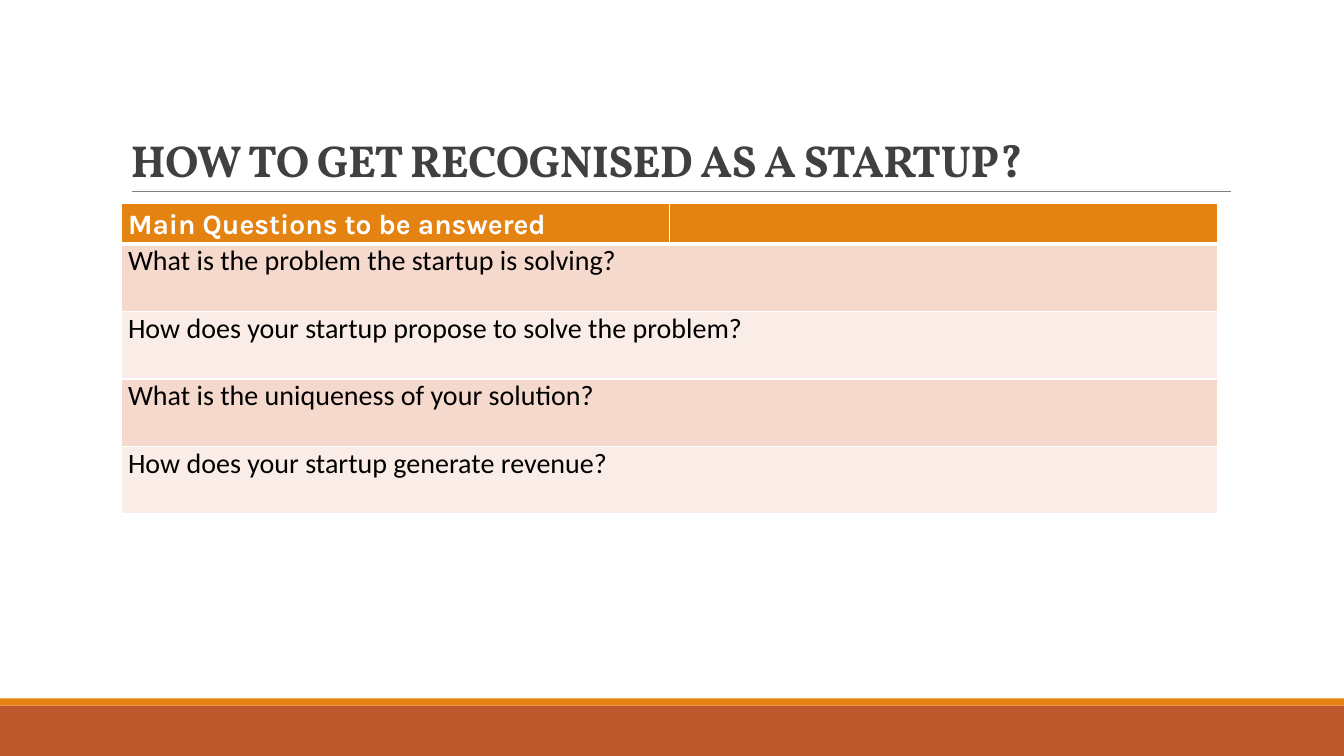
from pptx import Presentation, util as u
from pptx.dml.color import RGBColor
from pptx.enum import shapes, text
from pptx.oxml import parse_xml
from pptx.oxml.ns import nsdecls

COLORS = {
    "white": "FFFFFF", "black": "000000", "title": "404040", "rule": "808080",
    "orange": "E48312", "rust": "BD582C", "band_dark": "F5D9CC", "band_light": "FAEDE7",
}
QUESTIONS = [
    "What is the problem the startup is solving?",
    "How does your startup propose to solve the problem?",
    "What is the uniqueness of your solution?",
    "How does your startup generate revenue?",
]


def color(name):
    return RGBColor.from_string(COLORS[name])


class SlideBuilder:
    def __init__(self, slide):
        self.slide = slide

    def bar(self, top, height, fill):
        bar = self.slide.shapes.add_shape(
            shapes.MSO_SHAPE.RECTANGLE, 0, u.Inches(top), u.Inches(13.33), u.Inches(height))
        bar.shadow.inherit = False
        bar.fill.solid()
        bar.fill.fore_color.rgb = color(fill)
        bar.line.fill.background()

    def rule(self, left, right, y):
        rule = self.slide.shapes.add_connector(
            shapes.MSO_CONNECTOR.STRAIGHT,
            u.Inches(left), u.Inches(y), u.Inches(right), u.Inches(y))
        rule.line.color.rgb = color("rule")
        rule.line.width = u.Pt(0.5)
        rule._element.spPr.append(parse_xml(f"<a:effectLst {nsdecls('a')}/>"))

    def style_runs(self, paragraph, font, size, ink, bold=False):
        for run in paragraph.runs:
            run.font.name = font
            run.font.size = u.Pt(size)
            run.font.bold = bold
            run.font.color.rgb = color(ink)

    def title(self, wording, left, top, width, height):
        frame = self.slide.shapes.add_textbox(
            u.Inches(left), u.Inches(top), u.Inches(width), u.Inches(height)).text_frame
        frame.word_wrap = True
        frame.vertical_anchor = text.MSO_ANCHOR.BOTTOM
        frame.text = wording
        heading = frame.paragraphs[0]
        heading.line_spacing = 0.85
        self.style_runs(heading, "Vollkorn", 32, "title", bold=True)
        heading.runs[0].font._element.set("spc", "-50")

    def paint_cell(self, cell, fill, bottom=1):
        """Give the cell white borders and a solid fill."""
        properties = cell._tc.get_or_add_tcPr()
        for side, points in {"L": 1, "R": 1, "T": 1, "B": bottom}.items():
            properties.append(parse_xml(
                f'<a:ln{side} {nsdecls("a")} w="{u.Pt(points)}"><a:solidFill>'
                f'<a:srgbClr val="{COLORS["white"]}"/></a:solidFill></a:ln{side}>'))
        cell.fill.solid()
        cell.fill.fore_color.rgb = color(fill)

    def write_cell(self, cell, wording, font, ink, bold=False):
        cell.margin_left = cell.margin_right = u.Inches(0.07)
        cell.margin_top = cell.margin_bottom = 0
        cell.text_frame.text = wording
        paragraph = cell.text_frame.paragraphs[0]
        paragraph.alignment = text.PP_ALIGN.JUSTIFY
        self.style_runs(paragraph, font, 20, ink, bold)
        return paragraph

    def question_table(self, header, questions, left, top, width):
        header_height, row_height = u.Inches(0.4), u.Inches(0.67)
        table = self.slide.shapes.add_table(
            len(questions) + 1, 2, u.Inches(left), u.Inches(top), u.Inches(width),
            header_height + row_height * len(questions)).table
        table.rows[0].height = header_height
        for cell in table.rows[0].cells:
            self.paint_cell(cell, "orange", bottom=3)
        heading = self.write_cell(table.cell(0, 0), header, "Karla", "white", bold=True)
        heading.line_spacing = 1.15
        heading.space_after = u.Pt(10)
        for row, question in enumerate(questions, 1):
            table.rows[row].height = row_height
            for cell in table.rows[row].cells:
                self.paint_cell(cell, "band_dark" if row % 2 else "band_light")
            table.cell(row, 0).merge(table.cell(row, 1))
            self.write_cell(table.cell(row, 0), question, "Calibri", "black")


def main():
    deck = Presentation()
    deck.slide_width, deck.slide_height = u.Inches(13.33), u.Inches(7.5)
    builder = SlideBuilder(deck.slides.add_slide(deck.slide_layouts[6]))
    builder.bar(7, 0.5, "rust")
    builder.bar(6.93, 0.07, "orange")
    builder.rule(1.31, 12.21, 1.9)
    builder.title("HOW TO GET RECOGNISED AS A STARTUP?", 1.2, 0.31, 11, 1.59)
    builder.question_table("Main Questions to be answered", QUESTIONS, 1.2, 2.02, 10.88)
    deck.save("out.pptx")


if __name__ == "__main__":
    main()
